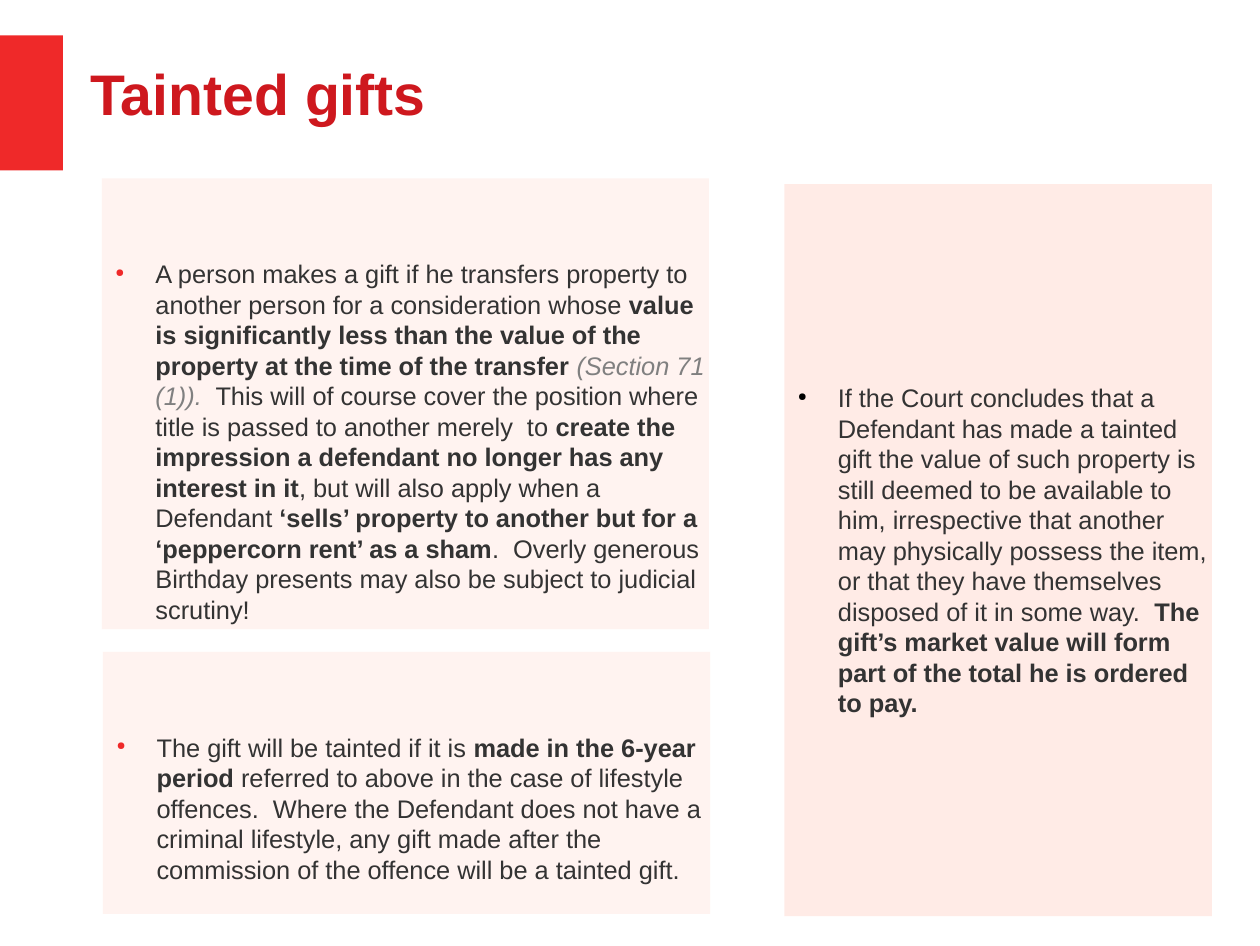
from lxml import etree
from pptx import Presentation
from pptx import util as u
from pptx.dml import color
from pptx.enum import shapes, text
from pptx.oxml import ns

WIDTH, HEIGHT = u.Inches(11.02), u.Inches(8.27)
COLUMN, ROW = WIDTH / 100, HEIGHT / 100
COLORS = {
    "bar": "EF2929", "title": "CE181E", "panel": "FFD8CE", "body": "333333",
    "cite": "808080", "red": "EF2929", "black": "000000",
}
STYLES = {
    "title": {"size": u.Pt(36), "bold": True, "italic": False},
    "body": {"size": u.Pt(16), "bold": False, "italic": False},
    "strong": {"size": u.Pt(16), "bold": True, "italic": False},
    "cite": {"size": u.Pt(16), "bold": False, "italic": True},
}
STYLE_COLORS = {"title": "title", "body": "body", "strong": "body", "cite": "cite"}

GIFT = [
    ("A person makes a gift if he transfers property to another person for a "
     "consideration whose ", "body"),
    ("value is significantly less than the value of the property at the time "
     "of the transfer ", "strong"),
    ("(Section 71 (1)).", "cite"),
    ("  This will of course cover the position where title is passed to "
     "another merely  to ", "body"),
    ("create the impression a defendant no longer has any interest in it", "strong"),
    (", but will also apply when a Defendant", "body"),
    (" ‘sells’ property to another but for a ‘peppercorn rent’ as a sham", "strong"),
    (".  Overly generous Birthday presents may also be subject to judicial "
     "scrutiny!", "body"),
]
PERIOD = [
    ("The gift will be tainted if it is ", "body"),
    ("made in the 6-year period", "strong"),
    (" referred to above in the case of lifestyle offences.  Where the Defendant "
     "does not have a criminal lifestyle, any gift made after the commission of "
     "the offence will be a tainted gift.", "body"),
]
COURT = [
    ("If the Court concludes that a Defendant has made a tainted gift the value "
     "of such property is still deemed to be available to him, irrespective that "
     "another may physically possess the item, or that they have themselves "
     "disposed of it in some way.  ", "body"),
    ("The gift’s market value will form part of the total he is ordered to pay.",
     "strong"),
]


def set_values(target, values):
    for name, value in values.items():
        setattr(target, name, value)


def rgb(name):
    return color.RGBColor.from_string(COLORS[name])


def place(left, top, width, height):
    return [round(n) for n in (left * COLUMN, top * ROW, width * COLUMN, height * ROW)]


def add_block(page, area, fill, opacity=100):
    block = page.shapes.add_shape(shapes.MSO_SHAPE.RECTANGLE, *place(*area))
    block.shadow.inherit = False
    block.line.fill.background()
    block.fill.solid()
    block.fill.fore_color.rgb = rgb(fill)
    if opacity < 100:
        tint = block.fill._xPr.find(".//" + ns.qn("a:srgbClr"))
        etree.SubElement(tint, ns.qn("a:alpha"), val=str(opacity * 1000))
    return block


def write(box, spans, anchor, top_rows=0):
    frame = box.text_frame
    set_values(frame, {
        "word_wrap": True, "vertical_anchor": anchor, "margin_left": 0,
        "margin_right": 0, "margin_bottom": 0, "margin_top": round(top_rows * ROW),
    })
    para = frame.paragraphs[0]
    para.alignment = text.PP_ALIGN.LEFT
    for wording, style in spans:
        span = para.add_run()
        span.text = wording
        set_values(span.font, {"name": "Arial", **STYLES[style]})
        span.font.color.rgb = rgb(STYLE_COLORS[style])
    return para


def add_bullet(para, tint):
    para.line_spacing = u.Pt(19.2)
    props = para._p.get_or_add_pPr()
    props.set("marL", str(round(4.26 * COLUMN)))
    props.set("indent", str(round(-3.18 * COLUMN)))
    holder = etree.SubElement(props, ns.qn("a:buClr"))
    etree.SubElement(holder, ns.qn("a:srgbClr"), val=COLORS[tint])
    etree.SubElement(props, ns.qn("a:buSzPct"), val="45000")
    etree.SubElement(props, ns.qn("a:buChar"), char="●")


def add_panel(page, area, spans, opacity, bullet, anchor, top_rows=0):
    panel = add_block(page, area, "panel", opacity)
    add_bullet(write(panel, spans, anchor, top_rows), bullet)


def add_title(page, area, wording):
    box = page.shapes.add_textbox(*place(*area))
    write(box, [(wording, "title")], text.MSO_ANCHOR.MIDDLE)


def main():
    deck = Presentation()
    set_values(deck, {"slide_width": WIDTH, "slide_height": HEIGHT})
    page = deck.slides.add_slide(deck.slide_layouts[6])
    top, middle = text.MSO_ANCHOR.TOP, text.MSO_ANCHOR.MIDDLE
    add_block(page, (0, 3.75, 4.99, 14.27), "bar")
    add_title(page, (7.17, 6.17, 87.84, 7.26), "Tainted gifts")
    add_panel(page, (8.08, 18.86, 48.19, 47.64), GIFT, 30, "red", top, 8.46)
    add_panel(page, (62.25, 19.47, 33.94, 77.39), COURT, 50, "black", middle)
    add_panel(page, (8.17, 68.92, 48.19, 27.69), PERIOD, 30, "red", top, 8.46)
    deck.save("out.pptx")


if __name__ == "__main__":
    main()
